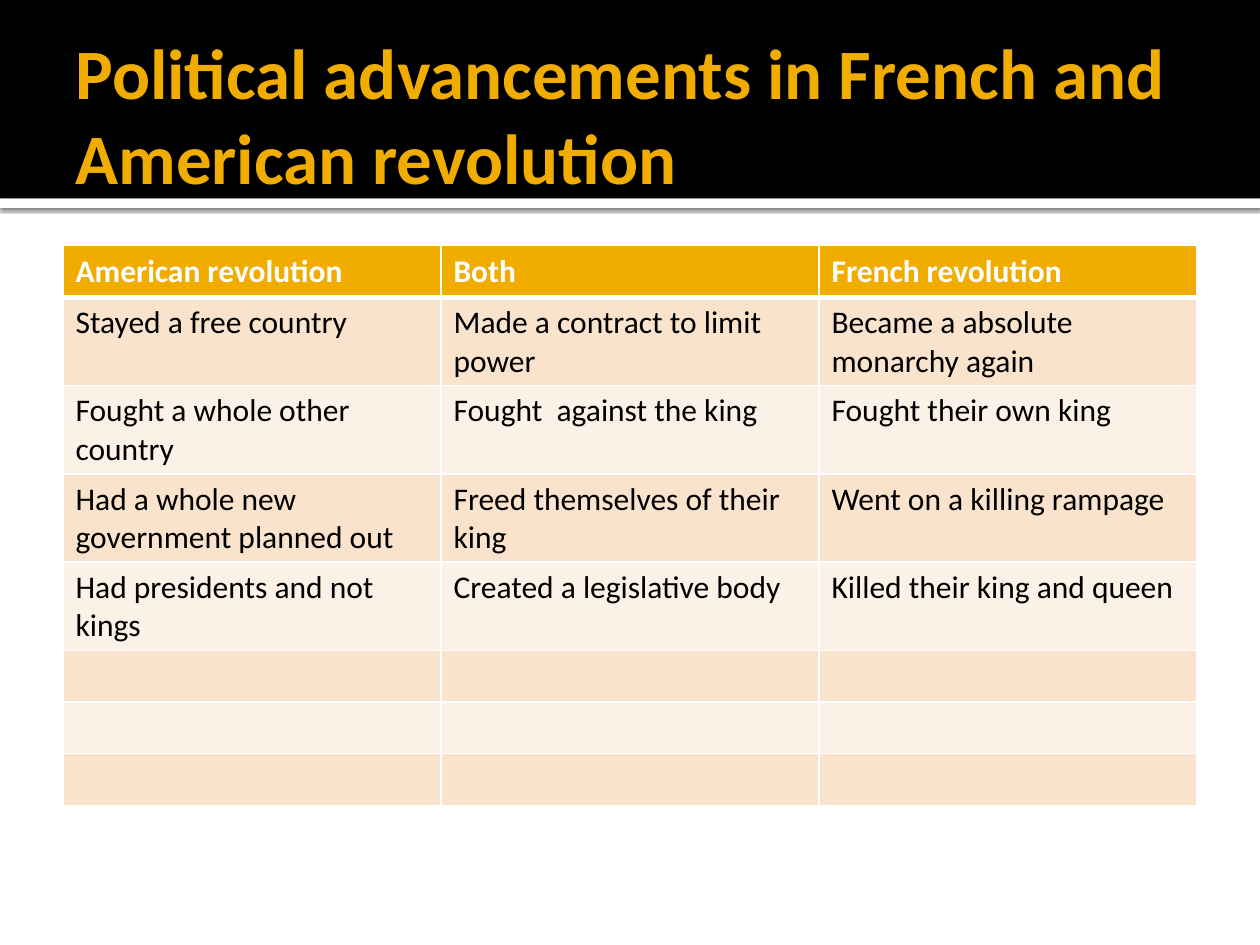
"""Build a slide with a table comparing the American and French revolutions."""
from lxml import etree
from pptx import Presentation
from pptx import util as u
from pptx.dml.color import RGBColor
from pptx.enum import shapes, text
from pptx.oxml import parse_xml
from pptx.oxml.ns import nsdecls, qn

COLORS = {
    "band": "000000",
    "strip": "FFFFFF",
    "accent": "F0AD00",
    "header_text": "FFFFFF",
    "body_text": "000000",
    "odd_row": "F9E3CC",
    "even_row": "FCF1E7",
    "border": "FFFFFF",
}
FONT = "Calibri"
WIDTH, HEIGHT = u.Inches(10), u.Inches(7.5)
MARGIN = 0.05
BAND_HEIGHT = 0.21
COMPARISON = [
    ("American revolution", "Both", "French revolution"),
    ("Stayed a free country", "Made a contract to limit power",
     "Became a absolute monarchy again"),
    ("Fought a whole other country", "Fought  against the king",
     "Fought their own king"),
    ("Had a whole new government planned out",
     "Freed themselves of their king", "Went on a killing rampage"),
    ("Had presidents and not kings", "Created a legislative body",
     "Killed their king and queen"),
]
EMPTY_ROWS = 3


def color(name):
    """Return the named colour."""
    return RGBColor.from_string(COLORS[name])


def share(left, top, width, height):
    """Turn shares of the slide's size into lengths."""
    return (int(left * WIDTH), int(top * HEIGHT),
            int(width * WIDTH), int(height * HEIGHT))


def style_text(frame, size, color_name, bold):
    """Format every run of a text frame."""
    for paragraph in frame.paragraphs:
        for run in paragraph.runs:
            run.font.name = FONT
            run.font.size = u.Pt(size)
            run.font.bold = bold
            run.font.color.rgb = color(color_name)


def add_bar(slide, top, height, color_name):
    """Add a plain bar across the whole slide."""
    bar = slide.shapes.add_shape(
        shapes.MSO_SHAPE.RECTANGLE, *share(0, top, 1, height))
    bar.shadow.inherit = False
    bar.fill.solid()
    bar.fill.fore_color.rgb = color(color_name)
    bar.line.fill.background()
    return bar


def add_drop_shadow(bar):
    """Cast a soft shadow below a bar."""
    effects = bar._element.spPr.find(qn("a:effectLst"))
    effects.append(parse_xml(
        f'<a:outerShdw {nsdecls("a")} blurRad="{u.Pt(2.5)}" dist="{u.Pt(0.8)}" '
        'dir="5400000" algn="tl" rotWithShape="0"><a:srgbClr val="000000">'
        '<a:alpha val="60000"/></a:srgbClr></a:outerShdw>'))


def add_title(slide, wording):
    """Add the slide's title over the dark band."""
    title = slide.shapes.add_textbox(*share(MARGIN, 0.03, 1 - 2 * MARGIN, 0.18))
    frame = title.text_frame
    frame.word_wrap = True
    frame.vertical_anchor = text.MSO_ANCHOR.MIDDLE
    frame.margin_left = u.Inches(0.1)
    frame.margin_right = u.Inches(0.05)
    frame.text = wording
    style_text(frame, 40.5, "accent", True)


def add_borders(cell, **widths):
    """Draw the cell's borders with the given widths in points."""
    properties = cell._tc.get_or_add_tcPr()
    for side, width in widths.items():
        line = etree.SubElement(properties, qn(f"a:ln{side}"), w=str(u.Pt(width)))
        fill = etree.SubElement(line, qn("a:solidFill"))
        etree.SubElement(fill, qn("a:srgbClr"), val=COLORS["border"])


def add_comparison(slide):
    """Add the comparison table with its header and banded rows."""
    columns = len(COMPARISON[0])
    rows = COMPARISON + [("",) * columns] * EMPTY_ROWS
    row_height = u.Inches(0.41)
    left, top, width, _ = share(MARGIN, 0.26, 1 - 2 * MARGIN, 0)
    table = slide.shapes.add_table(
        len(rows), columns, left, top, width, row_height * len(rows)).table
    for row, entries in enumerate(rows):
        table.rows[row].height = row_height
        header = row == 0
        fill = "accent" if header else "odd_row" if row % 2 else "even_row"
        for column, entry in enumerate(entries):
            cell = table.cell(row, column)
            add_borders(cell, L=1, R=1, T=3 if row == 1 else 1, B=3 if header else 1)
            cell.fill.solid()
            cell.fill.fore_color.rgb = color(fill)
            if entry:
                cell.text_frame.text = entry
                style_text(cell.text_frame, 18,
                           "header_text" if header else "body_text", header)


def main():
    """Build and save the slide."""
    deck = Presentation()
    deck.slide_width, deck.slide_height = WIDTH, HEIGHT
    slide = deck.slides.add_slide(deck.slide_layouts[6])
    add_drop_shadow(add_bar(slide, BAND_HEIGHT, 0.01, "strip"))
    add_bar(slide, 0, BAND_HEIGHT, "band")
    add_title(slide, "Political advancements in French and American revolution")
    add_comparison(slide)
    deck.save("out.pptx")


if __name__ == "__main__":
    main()
